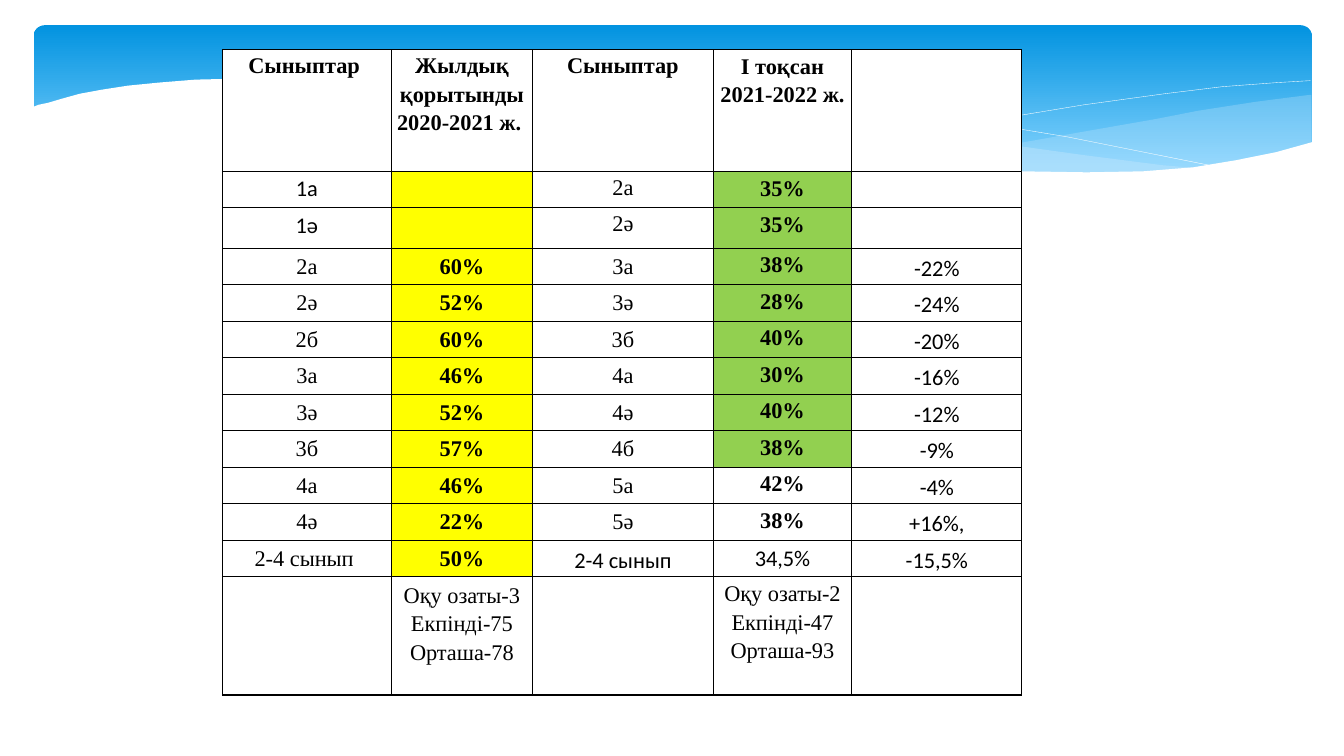
from lxml.etree import SubElement
from pptx import Presentation
from pptx.dml.color import RGBColor
from pptx.enum.shapes import MSO_SHAPE
from pptx.enum.text import PP_ALIGN
from pptx.oxml.ns import qn
from pptx.util import Pt


def color(hex_string):
    return RGBColor.from_string(hex_string)


def add_curve(points, closed):
    corners = [(Pt(x), Pt(y)) for x, y in points]
    builder = slide.shapes.build_freeform(*corners[0], scale=1.0)
    builder.add_line_segments(corners[1:], close=closed)
    shape = builder.convert_to_shape()
    shape.shadow.inherit = False
    return shape


presentation = Presentation()
presentation.slide_width = Pt(960)
presentation.slide_height = Pt(540)
slide = presentation.slides.add_slide(presentation.slide_layouts[6])

banner = slide.shapes.add_shape(MSO_SHAPE.ROUNDED_RECTANGLE, Pt(24), Pt(18), Pt(913), Pt(112.5))
banner.adjustments[0] = 0.071
banner.shadow.inherit = False
banner.line.fill.background()
banner.fill.gradient()
banner.fill.gradient_angle = 270
for stop, position, shade in zip(banner.fill.gradient_stops, (0, 0.9), ("0293E0", "83D3FE")):
    stop.position = position
    stop.color.rgb = color(shade)

right_wave = [
    (936, 67.7), (897.1, 72.7), (855.4, 79.2), (825.8, 85), (772.6, 94.3), (723.6, 103),
    (677.5, 109.4), (635, 115.2), (676.8, 118.8), (715, 121), (749.5, 123.1), (781.2, 123.8),
    (810.7, 123.5), (837.4, 121.7), (861.1, 118.8), (883.4, 115.2), (905, 110.9),
    (936.7, 102.2), (936.7, 67.7),
]
long_wave = [
    (856.8, 120.2), (830.9, 118.1), (774.7, 110.9), (712.1, 102.2), (641.5, 90.7),
    (604.1, 83.5), (560.2, 76.3), (519.1, 69.8), (481.7, 64.8), (445.7, 61.9), (403.2, 59),
    (364.3, 57.6), (330.5, 57.6), (301, 59), (275, 61.9), (310.3, 64.8), (347.8, 69.8),
    (388.1, 76.3), (431.3, 83.5), (508.3, 97.2), (577.4, 108), (638.6, 115.9), (693.4, 121),
    (742.3, 123.8), (784.8, 124.6), (823, 123.8),
]
falling_line = [
    (296.6, 64.8), (305.3, 63.4), (329.8, 61.2), (359.3, 59), (399.6, 58.3), (450, 59.8),
    (511.2, 63.4), (583.9, 70.6), (667.4, 82.1), (763.2, 97.9), (871.2, 119.5),
]
rising_line = [
    (589, 108.7), (626.4, 101.5), (667.4, 93.6), (717.8, 84.2), (774, 74.9), (831.6, 67),
    (873.4, 61.9), (912.2, 59), (936, 57.6),
]
white_wave = [
    (937.4, 101.5), (911.5, 108.7), (882.7, 114.5), (852.5, 119.5), (816.5, 122.4),
    (776.2, 123.1), (730.8, 122.4), (679.7, 118.8), (621.4, 112.3), (555.8, 103.7),
    (483.1, 92.2), (429.1, 82.1), (375.1, 73.4), (326.2, 66.2), (280.8, 61.2), (239.8, 58.3),
    (203, 56.2), (169.2, 56.2), (139.7, 56.9), (113.8, 59), (91.4, 61.2), (72.7, 64.1),
    (56.9, 67), (43.9, 70.6), (34.6, 73.4), (27.4, 74.9), (22.3, 77), (22.3, 161.3),
    (938.2, 161.3), (938.2, 100.8),
]

for points, shade, opacity in ((right_wave, "C6E7FC", 29), (long_wave, "C6E7FC", 40)):
    wave = add_curve(points, True)
    wave.line.fill.background()
    wave.fill.solid()
    wave.fill.fore_color.rgb = color(shade)
    shade_element = wave.fill._xPr.find(qn("a:solidFill"))[0]
    SubElement(shade_element, qn("a:alpha"), val=str(opacity * 1000))

for points in (falling_line, rising_line):
    curve = add_curve(points, False)
    curve.fill.background()
    curve.line.color.rgb = color("FFFFFF")
    curve.line.width = Pt(0.25)

lower_edge = add_curve(white_wave, True)
lower_edge.line.fill.background()
lower_edge.fill.solid()
lower_edge.fill.fore_color.rgb = color("FFFFFF")

rows = [
    ("Сыныптар ", "Жылдық\nқорытынды\n2020-2021 ж. ", "Сыныптар", "І тоқсан\n2021-2022 ж.", ""),
    ("1а", "", "2а", "35%", ""),
    ("1ә", "", "2ә", "35%", ""),
    ("2а", "60%", "3а", "38%", "-22%"),
    ("2ә", "52%", "3ә", "28%", "-24%"),
    ("2б", "60%", "3б", "40%", "-20%"),
    ("3а", "46%", "4а", "30%", "-16%"),
    ("3ә", "52%", "4ә", "40%", "-12%"),
    ("3б", "57%", "4б", "38%", "-9%"),
    ("4а", "46%", "5а", "42%", "-4%"),
    ("4ә", "22%", "5ә", "38%", "+16%,"),
    ("2-4 сынып ", "50%", "2-4 сынып", "34,5%", "-15,5%"),
    ("", "Оқу озаты-3\nЕкпінді-75\nОрташа-78", "", "Оқу озаты-2\nЕкпінді-47\nОрташа-93", ""),
]
column_widths = [120.5, 101, 129, 99, 121.5]
row_heights = [87, 25.8, 29] + [26.1] * 9 + [84.4]
calibri_cells = {(1, 0), (2, 0), (11, 2), (11, 3)}
total_row = 11

table = slide.shapes.add_table(
    len(rows), len(column_widths), Pt(159), Pt(35.5), Pt(sum(column_widths)), Pt(sum(row_heights))
).table
for column, width in zip(table.columns, column_widths):
    column.width = Pt(width)
for row, height in zip(table.rows, row_heights):
    row.height = Pt(height)

for row_index, row in enumerate(rows):
    for column_index, text in enumerate(row):
        cell = table.cell(row_index, column_index)
        if column_index == 3:
            side, top, bottom = 0.7, 0.7, 0
        elif row_index < 3:
            side, top, bottom = 3, 0, 0
        else:
            side, top, bottom = 3.6, 1.8, 1.8
        cell.margin_left = cell.margin_right = Pt(side)
        cell.margin_top, cell.margin_bottom = Pt(top), Pt(bottom)

        cell_properties = cell._tc.get_or_add_tcPr()
        for edge in ("lnL", "lnR", "lnT", "lnB"):
            border = SubElement(cell_properties, qn(f"a:{edge}"), w=str(Pt(1)))
            SubElement(SubElement(border, qn("a:solidFill")), qn("a:srgbClr"), val="000000")

        fill = "FFFFFF"
        if column_index == 1 and 1 <= row_index <= total_row:
            fill = "FFFF00"
        elif column_index == 3 and 1 <= row_index <= 8:
            fill = "92D050"
        cell.fill.solid()
        cell.fill.fore_color.rgb = color(fill)

        is_calibri = column_index == 4 or (row_index, column_index) in calibri_cells
        is_bold = row_index == 0 or (
            column_index in (1, 3) and row_index <= total_row and not is_calibri
        )
        cell.text = text
        for paragraph in cell.text_frame.paragraphs:
            paragraph.alignment = PP_ALIGN.CENTER
            paragraph.line_spacing = 1.15
            paragraph.font.name = "Calibri" if is_calibri else "Times New Roman"
            paragraph.font.size = Pt(16)
            paragraph.font.bold = is_bold
            paragraph.font.color.rgb = color("000000")

presentation.save("out.pptx")
